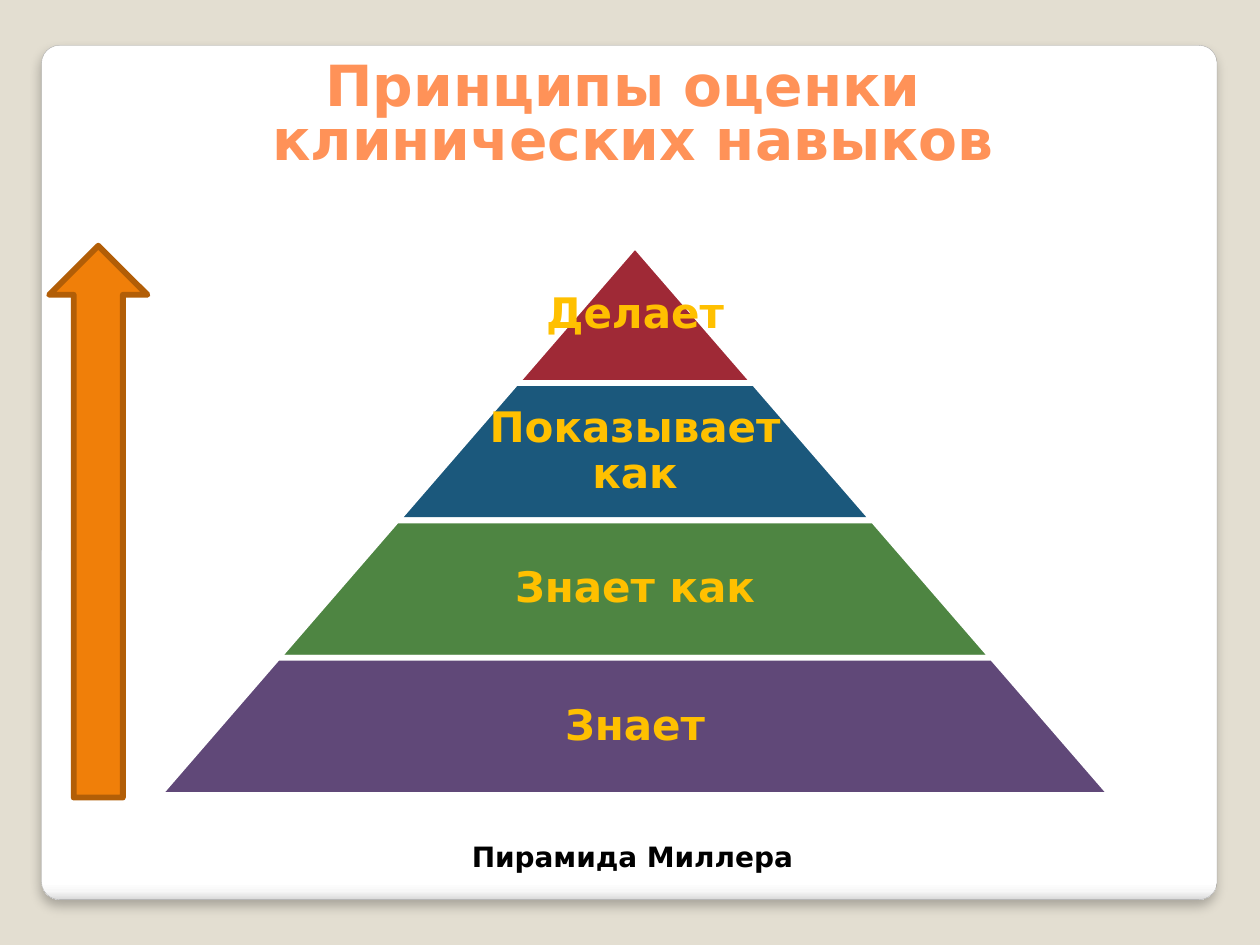
from lxml.etree import SubElement
from pptx import Presentation
from pptx.dml.color import RGBColor
from pptx.enum.shapes import MSO_SHAPE
from pptx.enum.text import MSO_ANCHOR, PP_ALIGN
from pptx.oxml.ns import qn
from pptx.util import Inches, Pt

BACK = RGBColor(0xE3, 0xDE, 0xD1)
WHITE = RGBColor(0xFF, 0xFF, 0xFF)
BLACK = RGBColor(0x00, 0x00, 0x00)
GREY = RGBColor(0xA4, 0xA4, 0xA4)
PEACH = RGBColor(0xFF, 0x92, 0x58)
GOLD = RGBColor(0xFF, 0xC0, 0x00)
ORANGE = RGBColor(0xF0, 0x7F, 0x09)
BROWN = RGBColor(0xB2, 0x5E, 0x07)
RED = RGBColor(0x9F, 0x29, 0x36)
BLUE = RGBColor(0x1B, 0x58, 0x7C)
GREEN = RGBColor(0x4E, 0x85, 0x42)
PURPLE = RGBColor(0x60, 0x48, 0x78)


class Deck:
    font = "DejaVu Sans"

    def __init__(self):
        self.prs = Presentation()
        self.prs.slide_width, self.prs.slide_height = Inches(10), Inches(7.5)
        self.slide = self.prs.slides.add_slide(self.prs.slide_layouts[6])
        fill = self.slide.background.fill
        fill.solid()
        fill.fore_color.rgb = BACK

    def shape(self, kind, box, fill=None, line=None, width=3.35, adj=None):
        item = self.slide.shapes.add_shape(kind, *map(Inches, box))
        item.shadow.inherit = False
        if fill is None:
            item.fill.background()
        else:
            item.fill.solid()
            item.fill.fore_color.rgb = fill
        if line is None:
            item.line.fill.background()
        else:
            item.line.color.rgb = line
            item.line.width = Pt(width)
        if adj is not None:
            item.adjustments[0] = adj
        return item

    def panel(self, box, stops):
        item = self.shape(MSO_SHAPE.ROUNDED_RECTANGLE, box, WHITE, GREY, 0.16, 0.021)
        item.fill.gradient()
        item.fill.gradient_angle = 270
        props = item.element.spPr
        # Gradient stops
        grad = props.find(".//" + qn("a:gsLst"))
        for old in list(grad):
            grad.remove(old)
        for pos, tone in stops:
            stop = SubElement(grad, qn("a:gs"), pos=str(pos * 1000))
            SubElement(stop, qn("a:srgbClr"), val=tone)
        # Soft shadow below
        cast = SubElement(props.find(qn("a:effectLst")), qn("a:outerShdw"),
                          blurRad=str(Pt(6)), dist=str(Pt(4)), dir="5400000",
                          algn="tl", rotWithShape="0")
        tone = SubElement(cast, qn("a:srgbClr"), val="000000")
        SubElement(tone, qn("a:alpha"), val="25000")

    def label(self, item, text, size, color, space=1.0, anchor=MSO_ANCHOR.MIDDLE):
        frame = item.text_frame
        frame.word_wrap = True
        frame.vertical_anchor = anchor
        para = frame.paragraphs[0]
        para.text = text
        para.alignment = PP_ALIGN.CENTER
        para.line_spacing = space
        font = para.font
        font.name, font.size, font.bold = self.font, Pt(size), True
        font.color.rgb = color
        return frame

    def text(self, box, text, size, color, space, anchor=MSO_ANCHOR.MIDDLE):
        item = self.slide.shapes.add_textbox(*map(Inches, box))
        return self.label(item, text, size, color, space, anchor)

    def tier(self, mid, top, width, high, name, fill, share):
        self.shape(MSO_SHAPE.TRAPEZOID, (mid - width / 2, top, width, high),
                   fill, WHITE, adj=0.866)
        room = width * share
        frame = self.text((mid - room / 2, top, room, high), name, 24, GOLD, 0.9)
        frame.margin_left = frame.margin_right = Inches(0.03)
        frame.margin_top = frame.margin_bottom = Inches(0.03)


def main():
    deck = Deck()

    # White panel
    deck.panel((0.33, 0.36, 9.33, 6.78),
               [(0, "FFFFFF"), (98, "FFFFFF"), (99, "F7F7F7"), (100, "DADADA")])

    # Pyramid, from the tip down
    tiers = [("Делает", RED), ("Показывает как", BLUE),
             ("Знает как", GREEN), ("Знает", PURPLE)]
    step, high = 1.89, 1.09
    for row, (name, fill) in enumerate(tiers):
        share = 0.65 if row else 1
        deck.tier(5.04, 1.95 + row * high, step * (row + 1), high, name, fill, share)

    # Title
    deck.text((0.55, 0.39, 8.95, 1.02), "Принципы оценки \vклинических навыков",
              32.4, PEACH, 0.8, MSO_ANCHOR.BOTTOM)

    # Caption
    note = deck.shape(MSO_SHAPE.ROUNDED_RECTANGLE, (3.42, 6.64, 3.2, 0.31))
    deck.label(note, "Пирамида Миллера", 16, BLACK)

    # Growth arrow
    deck.shape(MSO_SHAPE.UP_ARROW, (0.39, 1.95, 0.78, 4.38), ORANGE, BROWN)

    deck.prs.save("out.pptx")


if __name__ == "__main__":
    main()
